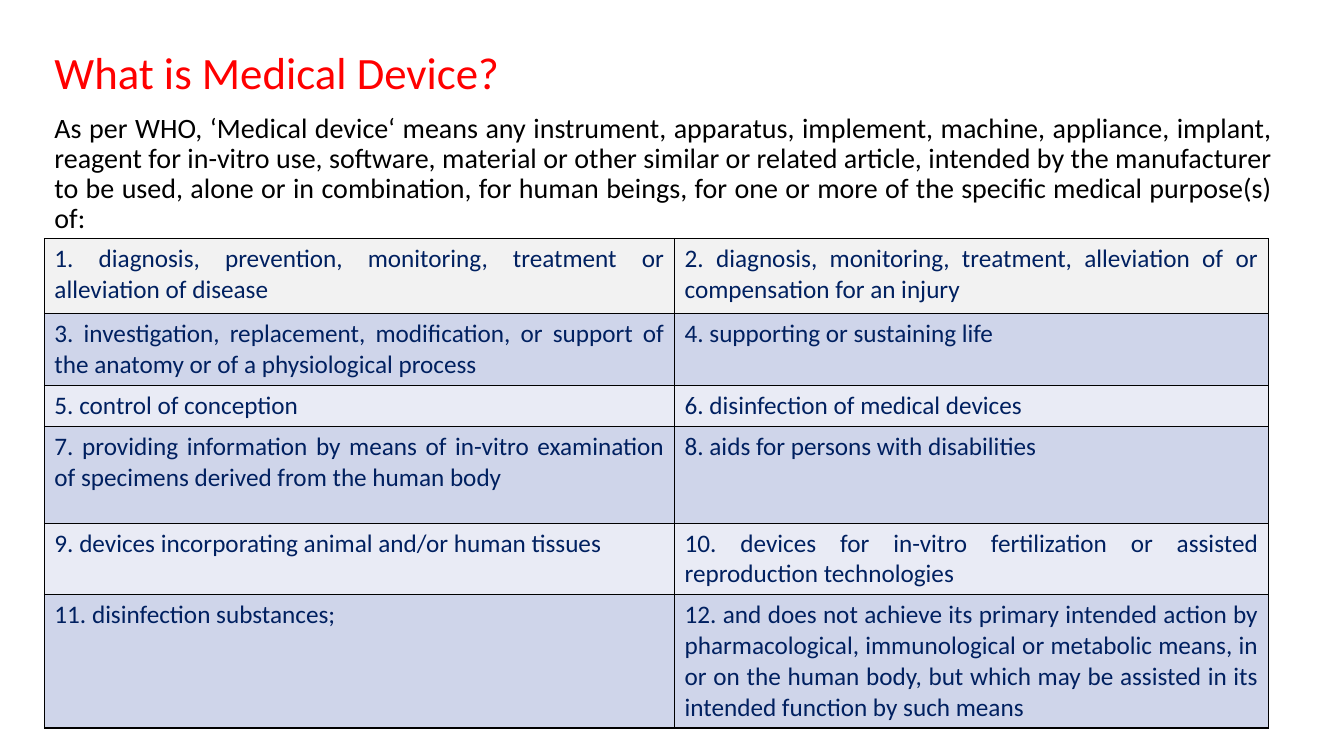
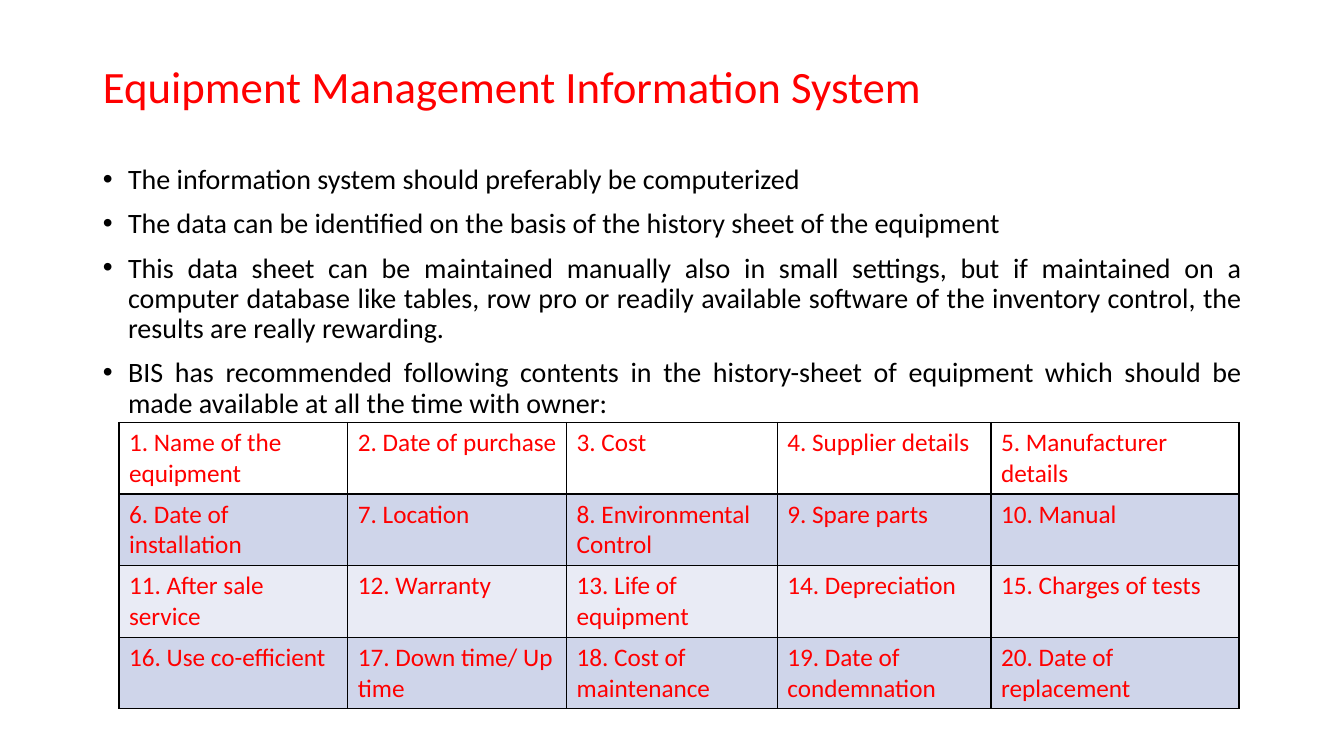
from lxml import etree
from pptx import Presentation
from pptx import util as u
from pptx.dml.color import RGBColor
from pptx.enum import text
from pptx.oxml.ns import qn

# Shared look
FONT = "Calibri"
RED, NAVY, BLACK, WHITE = "FF0000", "002060", "000000", "FFFFFF"
PALE_GREY, BAND_DARK, BAND_LIGHT = "F2F2F2", "CFD5EA", "E9EBF5"
TITLE_PT, BODY_PT, CELL_PT = 32, 20, 18
LEFT, JUSTIFY = text.PP_ALIGN.LEFT, text.PP_ALIGN.JUSTIFY
BULLET_INDENT = u.Inches(0.25)

# Content
DEFINITION = [
    "As per WHO, ‘Medical device‘ means any instrument, apparatus, implement, "
    "machine, appliance, implant, reagent for in-vitro use, software, material "
    "or other similar or related article, intended by the manufacturer to be "
    "used, alone or in combination, for human beings, for one or more of the "
    "specific medical purpose(s) of:",
]
PURPOSES = [
    "diagnosis, prevention, monitoring, treatment or alleviation of disease",
    "diagnosis, monitoring, treatment, alleviation of or compensation for an injury",
    "investigation, replacement, modification, or support of the anatomy or of "
    "a physiological process",
    "supporting or sustaining life",
    "control of conception",
    "disinfection of medical devices",
    "providing information by means of in-vitro examination of specimens "
    "derived from the human body",
    "aids for persons with disabilities",
    "devices incorporating animal and/or human tissues",
    "devices for in-vitro fertilization or assisted reproduction technologies",
    "disinfection substances;",
    "and does not achieve its primary intended action by pharmacological, "
    "immunological or metabolic means, in or on the human body, but which may "
    "be assisted in its intended function by such means",
]
SYSTEM_POINTS = [
    "The information system should preferably be computerized",
    "The data can be identified on the basis of the history sheet of the equipment",
    "This data sheet can be maintained manually also in small settings, but if "
    "maintained on a computer database like tables, row pro or readily available "
    "software of the inventory control, the results are really rewarding.",
    "BIS has recommended following contents in the history-sheet of equipment "
    "which should be made available at all the time with owner:",
]
HISTORY_SHEET = [
    "Name of the equipment", "Date of purchase", "Cost", "Supplier details",
    "Manufacturer details",
    "Date of installation", "Location", "Environmental Control", "Spare parts",
    "Manual",
    "After sale service", "Warranty", "Life of equipment", "Depreciation",
    "Charges of tests",
    "Use co-efficient", "Down time/ Up time", "Cost of maintenance",
    "Date of condemnation", "Date of replacement",
]


def color(hex_code):
    return RGBColor.from_string(hex_code)


def place(holder, box):
    holder.left, holder.top, holder.width, holder.height = map(u.Inches, box)
    holder.text_frame.word_wrap = True
    holder.text_frame.auto_size = text.MSO_AUTO_SIZE.NONE


def write(paragraph, words, size, hex_code, align=LEFT):
    paragraph.alignment = align
    run = paragraph.add_run()
    run.text = words
    run.font.name = FONT
    run.font.size = u.Pt(size)
    run.font.color.rgb = color(hex_code)


def set_bullet(paragraph, bulleted):
    properties = paragraph._p.get_or_add_pPr()
    indent = BULLET_INDENT if bulleted else 0
    properties.set("marL", str(indent))
    properties.set("indent", str(-indent))
    if bulleted:
        etree.SubElement(properties, qn("a:buFont")).set("typeface", "Arial")
        etree.SubElement(properties, qn("a:buChar")).set("char", "•")
    else:
        etree.SubElement(properties, qn("a:buNone"))


def add_title(slide, words, box):
    title = slide.shapes.title
    place(title, box)
    title.text_frame.vertical_anchor = text.MSO_ANCHOR.MIDDLE
    heading = title.text_frame.paragraphs[0]
    heading.line_spacing = 0.9
    write(heading, words, TITLE_PT, RED)


def add_body(slide, points, box, bulleted):
    body = slide.placeholders[1]
    place(body, box)
    frame = body.text_frame
    for i, point in enumerate(points):
        paragraph = frame.add_paragraph() if i else frame.paragraphs[0]
        paragraph.line_spacing = 0.9
        paragraph.space_before = u.Pt(10)
        set_bullet(paragraph, bulleted)
        write(paragraph, point, BODY_PT, BLACK, JUSTIFY)


def add_borders(cell):
    properties = cell._tc.get_or_add_tcPr()
    for side in ("a:lnL", "a:lnR", "a:lnT", "a:lnB"):
        line = etree.SubElement(properties, qn(side), w=str(u.Pt(1)))
        fill = etree.SubElement(line, qn("a:solidFill"))
        etree.SubElement(fill, qn("a:srgbClr"), val=BLACK)


def add_numbered_table(slide, items, corner, widths, heights, top_fill,
                       ink, align):
    """Number the items row by row, with banded rows below the first."""
    left, top = corner
    box = map(u.Inches, (left, top, sum(widths), sum(heights)))
    table = slide.shapes.add_table(len(heights), len(widths), *box).table
    table.first_row = table.horz_banding = False
    for column, width in zip(table.columns, widths):
        column.width = u.Inches(width)
    for row, height in zip(table.rows, heights):
        row.height = u.Inches(height)
    for i, item in enumerate(items):
        row, column = divmod(i, len(widths))
        cell = table.cell(row, column)
        add_borders(cell)
        cell.fill.solid()
        band = BAND_DARK if row % 2 else BAND_LIGHT
        cell.fill.fore_color.rgb = color(band if row else top_fill)
        write(cell.text_frame.paragraphs[0], f"{i + 1}. {item}", CELL_PT,
              ink, align)


def main():
    deck = Presentation()
    deck.slide_width, deck.slide_height = u.Inches(13.33), u.Inches(7.5)
    layout = deck.slide_layouts[1]

    # Definition of a medical device
    device = deck.slides.add_slide(layout)
    add_title(device, "What is Medical Device?", (0.44, 0.4, 12.15, 0.69))
    add_body(device, DEFINITION, (0.44, 1.08, 12.28, 5.67), bulleted=False)
    add_numbered_table(device, PURPOSES, (0.44, 2.37), (6.25, 5.89),
                       (0.74, 0.71, 0.41, 0.96, 0.71, 1.32),
                       PALE_GREY, NAVY, JUSTIFY)

    # Equipment history sheet
    system = deck.slides.add_slide(layout)
    add_title(system, "Equipment Management Information System",
              (0.92, 0.4, 11.5, 0.97))
    add_body(system, SYSTEM_POINTS, (0.92, 1.59, 11.5, 4.76), bulleted=True)
    add_numbered_table(system, HISTORY_SHEET, (1.18, 4.19),
                       (2.27, 2.17, 2.09, 2.12, 2.46), [0.71] * 4,
                       WHITE, RED, LEFT)

    deck.save("out.pptx")


if __name__ == "__main__":
    main()
